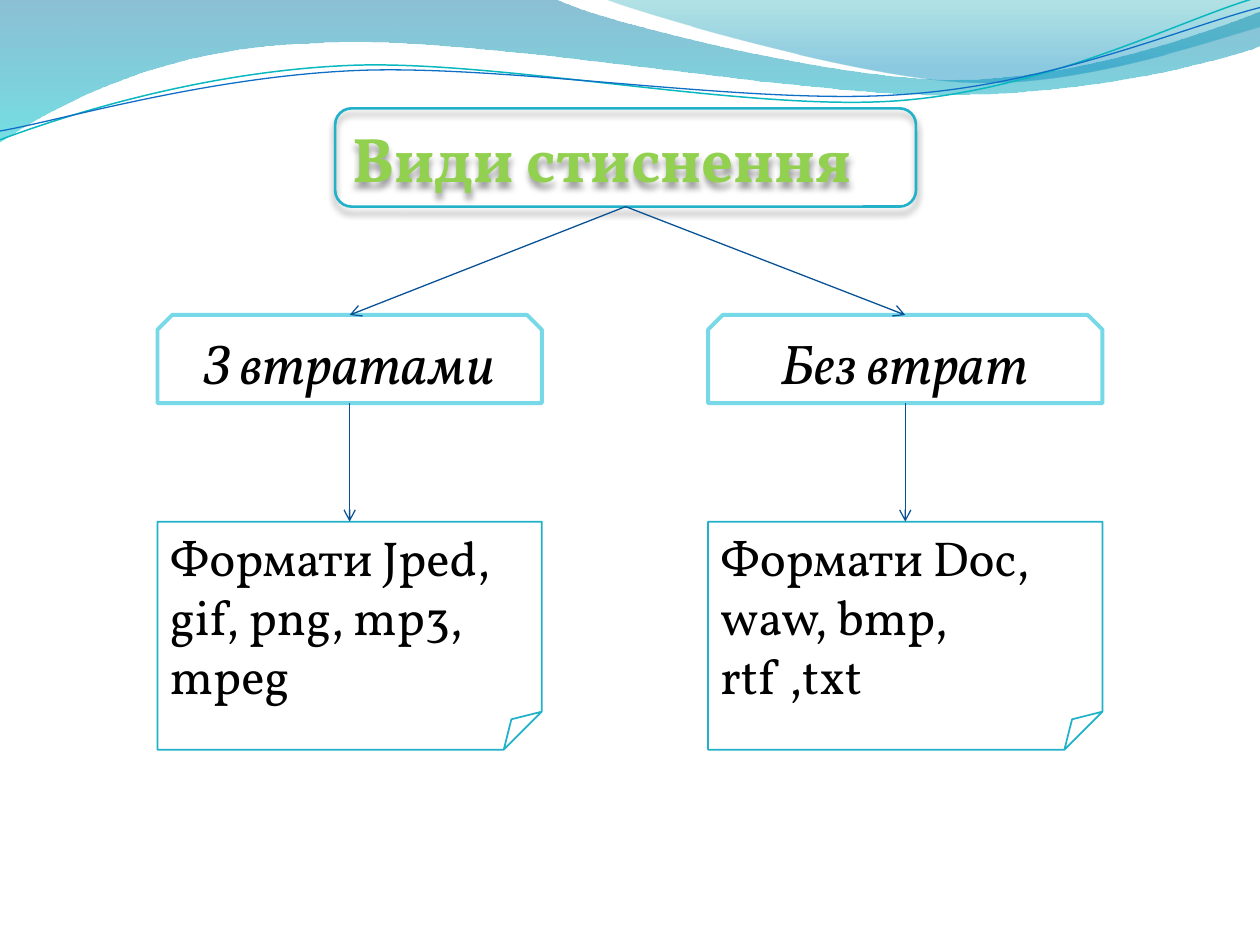
import lxml.etree
import pptx
import pptx.dml.color
import pptx.enum.shapes
import pptx.enum.text
import pptx.oxml
import pptx.oxml.ns
import pptx.util

RGB = pptx.dml.color.RGBColor
SHAPE = pptx.enum.shapes.MSO_SHAPE
ALIGN = pptx.enum.text.PP_ALIGN
Inches = pptx.util.Inches
Pt = pptx.util.Pt
qn = pptx.oxml.ns.qn

BLACK = RGB(0x00, 0x00, 0x00)
GREEN = RGB(0x92, 0xD0, 0x50)
TEAL = RGB(0x21, 0xB2, 0xC9)
AQUA = RGB(0x77, 0xD9, 0xE8)
NAVY = RGB(0x09, 0x52, 0x95)
WAVE_TEAL = RGB(0x0A, 0xB8, 0xBF)
WAVE_BLUE = RGB(0x0F, 0x6F, 0xC6)
DEEP_BLUE = RGB(0x00, 0x74, 0xA1)
CYAN = RGB(0x00, 0xC6, 0xCF)
SEA = RGB(0x00, 0xA1, 0xA9)
SKY = RGB(0x00, 0x8B, 0xBF)

FONT = "Vollkorn"
TITLE_FONT = {"name": FONT, "size": Pt(36), "bold": True}
KIND_FONT = {"name": FONT, "size": Pt(32), "italic": True}
FORMATS_FONT = {"name": FONT, "size": Pt(28)}

TITLE_COLUMN = (2.66, 4.61)
TITLE_ROW = (0.86, 0.78)
KIND_ROW = (2.5, 0.7)
FORMATS_ROW = (4.14, 1.81)
BRANCHES = [
    (1.25, 3.05, "З втратами", "Формати Jped, gif, png, mp3, mpeg"),
    (5.62, 3.13, "Без втрат", "Формати Doc, waw, bmp, rtf ,txt"),
]

BANDS = [
    ([(0, 0), (4.4, -0.01), (4.76, 0.17, 6.64, 0.63, 7.58, 0.63),
      (8.53, 0.63, 9.58, 0.26, 10, 0.09), (10.01, 0.36),
      (9.83, 0.44, 8.7, 0.76, 7.46, 0.75), (6.22, 0.75, 3.82, 0.28, 2.57, 0.34),
      (1.29, 0.36, 0.46, 0.83, -0.01, 1.13), (0, 0)],
     [(0, DEEP_BLUE, 45), (1, CYAN, 55)]),
    ([(4.79, -0.01), (5.09, 0.11, 6.82, 0.62, 7.69, 0.65),
      (8.56, 0.69, 9.61, 0.32, 10, 0.21), (10, 0), (4.79, -0.01)],
     [(0, SEA, 30), (0.8, SKY, 45)]),
]
RIPPLES = [
    ([(0, 1.11), (0.48, 0.93, 1.58, 0.57, 2.77, 0.52),
      (3.95, 0.47, 5.93, 0.89, 7.13, 0.8), (8.33, 0.71, 9.38, 0.15, 9.98, -0.02)],
     WAVE_TEAL, 0.85),
    ([(0, 1.04), (0.47, 0.96, 1.64, 0.61, 2.83, 0.56),
      (4.03, 0.51, 5.97, 0.84, 7.17, 0.75), (8.36, 0.67, 9.41, 0.21, 10, 0.06)],
     WAVE_BLUE, 0.75),
]


def set_line(shape, color, width):
    """Give a shape or connector a solid line."""
    shape.line.color.rgb = color
    shape.line.width = Pt(width)


def add_wave(slide, outline, close):
    """Draw one shadowless outline of straight and cubic pieces."""
    start, *ends = [tuple(map(Inches, piece[-2:])) for piece in outline]
    builder = slide.shapes.build_freeform(*start, scale=1.0)
    builder.add_line_segments(ends, close=close)
    wave = builder.convert_to_shape()
    wave.shadow.inherit = False
    for segment, piece in zip(list(wave._element.iter(qn("a:lnTo"))), outline[1:]):
        if len(piece) == 6:
            curve = lxml.etree.Element(qn("a:cubicBezTo"))
            for x, y in zip(piece[::2], piece[1::2]):
                lxml.etree.SubElement(curve, qn("a:pt"), x=str(Inches(x) - wave.left),
                                      y=str(Inches(y) - wave.top))
            segment.getparent().replace(segment, curve)
    return wave


def add_band(slide, outline, stops):
    """Draw a wave filled with a translucent downward gradient."""
    band = add_wave(slide, outline, True)
    band.line.fill.background()
    band.fill.gradient()
    band.fill.gradient_angle = 270
    for stop, (position, color, _) in zip(band.fill.gradient_stops, stops):
        stop.position = position
        stop.color.rgb = color
    for tint, (_, _, opacity) in zip(band._element.spPr.iter(qn("a:srgbClr")), stops):
        lxml.etree.SubElement(tint, qn("a:alpha"), val=str(opacity * 1000))


def add_ripple(slide, outline, color, width):
    """Draw a thin open wave line."""
    ripple = add_wave(slide, outline, False)
    ripple.fill.background()
    set_line(ripple, color, width)


def write(shape, text, font, color, align):
    """Write one formatted paragraph at the top of a shape."""
    frame = shape.text_frame
    frame.text = text
    frame.word_wrap = True
    frame.vertical_anchor = pptx.enum.text.MSO_ANCHOR.TOP
    frame.auto_size = pptx.enum.text.MSO_AUTO_SIZE.SHAPE_TO_FIT_TEXT
    paragraph = frame.paragraphs[0]
    paragraph.alignment = align
    run = paragraph.runs[0]
    for name, value in font.items():
        setattr(run.font, name, value)
    run.font.color.rgb = color


def add_box(slide, kind, column, row, line, text, font, color, align):
    """Add an unfilled outlined box at a column and row of the tree."""
    (left, width), (top, height) = column, row
    box = slide.shapes.add_shape(kind, *map(Inches, (left, top, width, height)))
    box.shadow.inherit = False
    box.fill.background()
    set_line(box, *line)
    write(box, text, font, color, align)
    return box


def add_shadow(box):
    """Drop a soft shadow below a box."""
    effects = box._element.spPr.find(qn("a:effectLst"))
    effects.append(pptx.oxml.parse_xml(
        f'<a:outerShdw {pptx.oxml.ns.nsdecls("a")} blurRad="{Pt(4)}" '
        f'dist="{Pt(3)}" dir="5400000" rotWithShape="0">'
        '<a:srgbClr val="000000"><a:alpha val="40000"/></a:srgbClr></a:outerShdw>'))


def add_arrow(slide, upper, lower):
    """Draw an arrow from the foot of one box to the head of the next."""
    arrow = slide.shapes.add_connector(
        pptx.enum.shapes.MSO_CONNECTOR.STRAIGHT,
        upper.left + upper.width // 2, upper.top + upper.height,
        lower.left + lower.width // 2, lower.top)
    set_line(arrow, NAVY, 0.75)
    lxml.etree.SubElement(arrow.line._get_or_add_ln(), qn("a:tailEnd"), type="arrow")
    lxml.etree.SubElement(arrow._element.spPr, qn("a:effectLst"))
    return arrow


def main():
    """Build the slide of compression kinds."""
    deck = pptx.Presentation()
    deck.slide_width, deck.slide_height = Inches(10), Inches(7.5)
    slide = deck.slides.add_slide(deck.slide_layouts[6])
    for band in BANDS:
        add_band(slide, *band)
    for ripple in RIPPLES:
        add_ripple(slide, *ripple)
    title = add_box(slide, SHAPE.FLOWCHART_ALTERNATE_PROCESS, TITLE_COLUMN, TITLE_ROW,
                    (TEAL, 1.5), "Види стиснення", TITLE_FONT, GREEN, ALIGN.LEFT)
    add_shadow(title)
    branches = []
    for left, width, kind_text, formats_text in BRANCHES:
        column = (left, width)
        kind = add_box(slide, SHAPE.SNIP_2_SAME_RECTANGLE, column, KIND_ROW,
                       (AQUA, 2.25), kind_text, KIND_FONT, BLACK, ALIGN.CENTER)
        formats = add_box(slide, SHAPE.FOLDED_CORNER, column, FORMATS_ROW,
                          (TEAL, 1), formats_text, FORMATS_FONT, BLACK, ALIGN.LEFT)
        branches.append((kind, formats))
    for kind, formats in branches:
        add_arrow(slide, title, kind).begin_connect(title, 2)
        add_arrow(slide, kind, formats).end_connect(formats, 0)
    deck.save("out.pptx")


if __name__ == "__main__":
    main()
